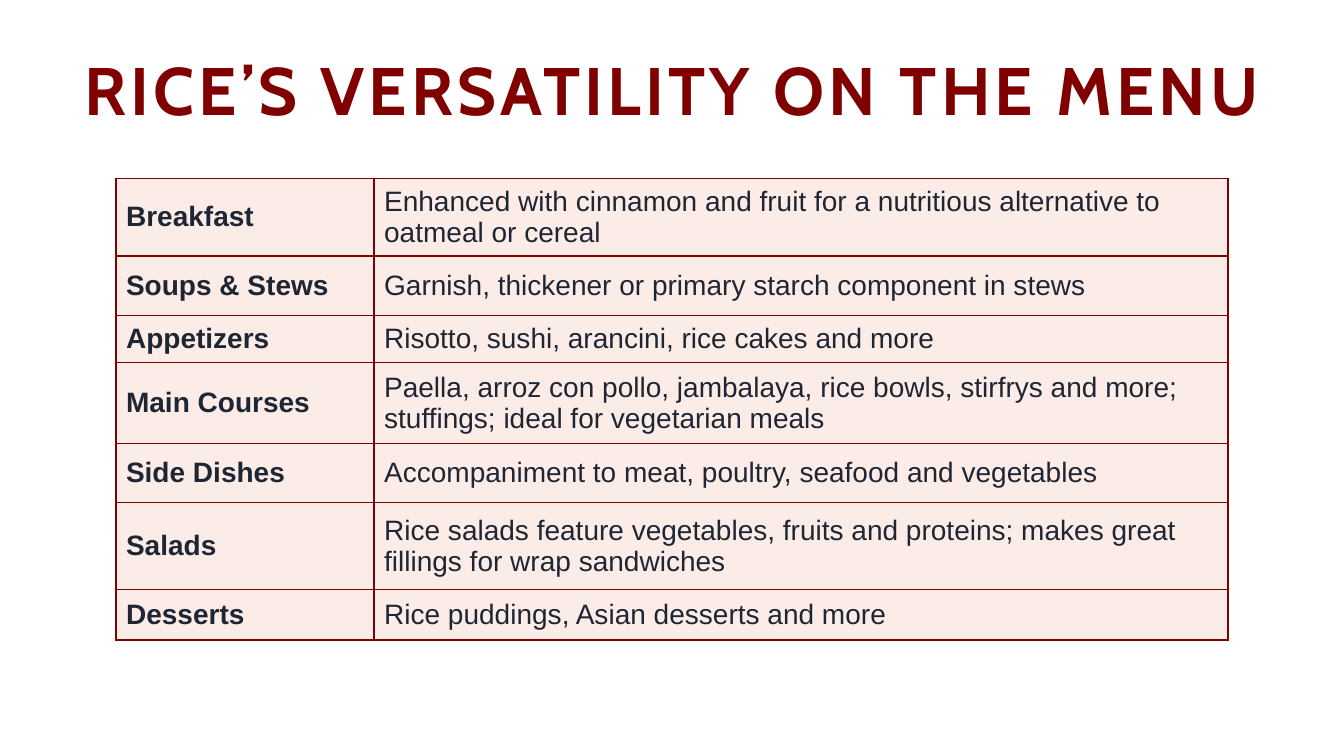
from lxml import etree
from pptx import Presentation
from pptx.dml.color import RGBColor
from pptx.enum.text import MSO_ANCHOR as Anchor, PP_ALIGN as Align
from pptx.oxml.ns import qn
from pptx.util import Inches, Pt

MAROON, INK, BLUSH = "800000", "1E2633", "FCECE8"

COLUMN_WIDTHS = (2.56, 8.47)

# Row height, course, how rice is used
MENU = [
    (0.77, "Breakfast", "Enhanced with cinnamon and fruit for a nutritious alternative to oatmeal or cereal"),
    (0.59, "Soups & Stews", "Garnish, thickener or primary starch component in stews"),
    (0.47, "Appetizers", "Risotto, sushi, arancini, rice cakes and more"),
    (0.80, "Main Courses", "Paella, arroz con pollo, jambalaya, rice bowls, stirfrys and more; "
                           "stuffings; ideal for vegetarian meals"),
    (0.59, "Side Dishes", "Accompaniment to meat, poultry, seafood and vegetables"),
    (0.86, "Salads", "Rice salads feature vegetables, fruits and proteins; makes great "
                     "fillings for wrap sandwiches"),
    (0.50, "Desserts", "Rice puddings, Asian desserts and more"),
]


def rgb(hex_code):
    return RGBColor.from_string(hex_code)


def add_run(paragraph, text, font_name, size, color, bold):
    run = paragraph.add_run()
    run.text = text
    run.font.name = font_name
    run.font.size = Pt(size)
    run.font.bold = bold
    run.font.color.rgb = rgb(color)
    return run


def add_title(slide, text):
    title = slide.shapes.add_textbox(Inches(0.2), Inches(0.31), Inches(12.94), Inches(1.25))
    frame = title.text_frame
    frame.word_wrap = True
    frame.vertical_anchor = Anchor.MIDDLE
    heading = frame.paragraphs[0]
    heading.alignment = Align.CENTER
    heading.line_spacing = 0.9
    run = add_run(heading, text, "Cabin", 48, MAROON, True)
    # Letter spacing of 3 points
    run.font._element.set("spc", "300")


def add_borders(cell, color, width):
    properties = cell._tc.get_or_add_tcPr()
    for side in ("a:lnL", "a:lnR", "a:lnT", "a:lnB"):
        line = etree.SubElement(properties, qn(side), w=str(Pt(width)))
        fill = etree.SubElement(line, qn("a:solidFill"))
        etree.SubElement(fill, qn("a:srgbClr"), val=color)


def fill_cell(cell, text, bold):
    add_borders(cell, MAROON, 1)
    cell.fill.solid()
    cell.fill.fore_color.rgb = rgb(BLUSH)
    cell.vertical_anchor = Anchor.MIDDLE
    cell.margin_left = cell.margin_right = Inches(0.1)
    cell.margin_top = cell.margin_bottom = Inches(0.05)
    add_run(cell.text_frame.paragraphs[0], text, "Arial", 20, INK, bold)


def add_menu_table(slide):
    height = sum(row_height for row_height, _, _ in MENU)
    menu = slide.shapes.add_table(len(MENU), len(COLUMN_WIDTHS), Inches(1.15), Inches(1.77),
                                  Inches(sum(COLUMN_WIDTHS)), Inches(height)).table
    menu.first_row = menu.horz_banding = False
    for column, width in zip(menu.columns, COLUMN_WIDTHS):
        column.width = Inches(width)
    for row, (row_height, course, use) in zip(menu.rows, MENU):
        row.height = Inches(row_height)
        fill_cell(row.cells[0], course, True)
        fill_cell(row.cells[1], use, False)


def main():
    deck = Presentation()
    deck.slide_width, deck.slide_height = Inches(13.33), Inches(7.5)
    slide = deck.slides.add_slide(deck.slide_layouts[6])
    add_title(slide, "RICE’S VERSATILITY ON THE MENU")
    add_menu_table(slide)
    deck.save("out.pptx")


if __name__ == "__main__":
    main()
